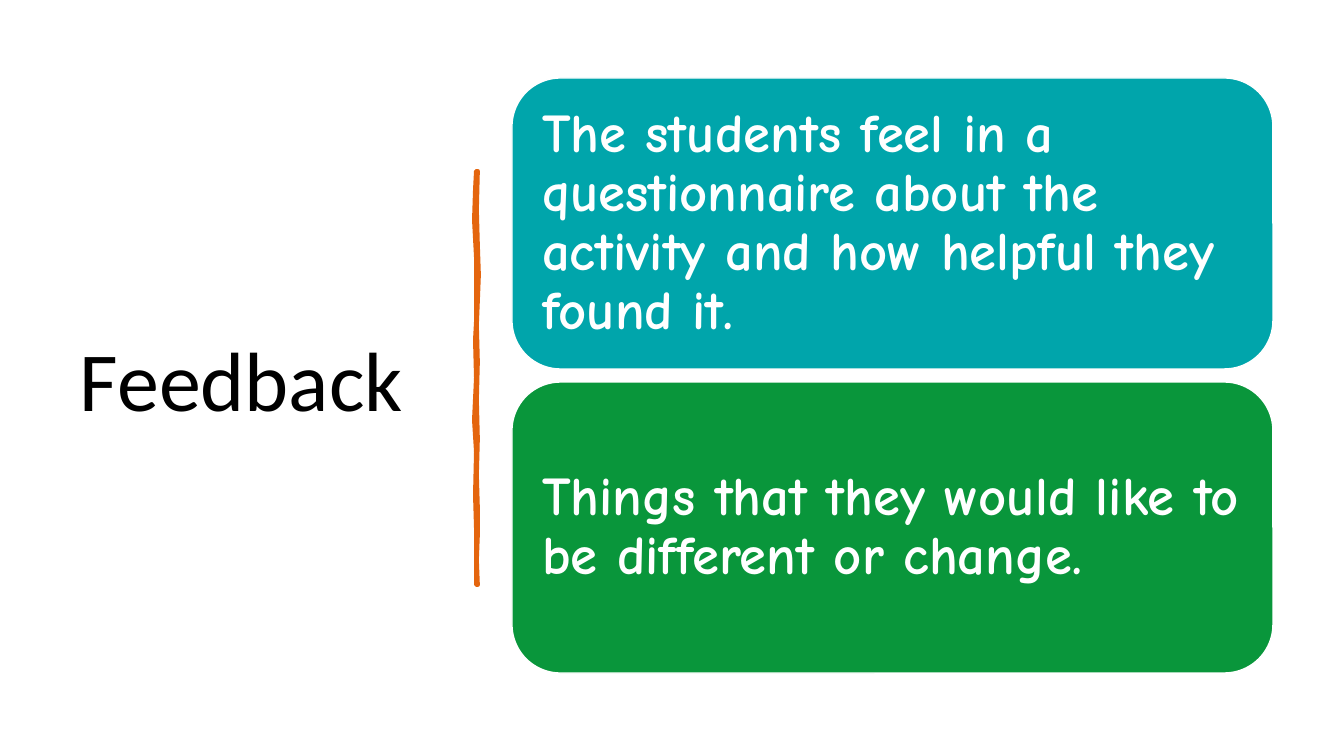
"""Build the Feedback slide: a title, a hand-drawn divider and two rounded panels."""
from pptx import Presentation
from pptx import util as u
from pptx.dml.color import RGBColor
from pptx.enum import shapes, text

PX = 914400 / 100.8


def px(length):
    return u.Emu(round(length * PX))


def color(value):
    return RGBColor.from_string(value)


deck = Presentation()
deck.slide_width, deck.slide_height = px(1344), px(756)
slide = deck.slides.add_slide(deck.slide_layouts[6])

backdrop = slide.shapes.add_shape(shapes.MSO_SHAPE.RECTANGLE, 0, 0, px(1344), px(756))
backdrop.shadow.inherit = False
backdrop.fill.solid()
backdrop.fill.fore_color.rgb = color("FFFFFF")
backdrop.line.fill.background()

title = slide.shapes.add_textbox(px(70), px(70), px(377), px(616))
title_frame = title.text_frame
title_frame.word_wrap = True
title_frame.vertical_anchor = text.MSO_ANCHOR.MIDDLE
heading = title_frame.paragraphs[0]
heading.text = "Feedback"
heading.font.name = "Calibri"
heading.font.size = u.Pt(60)
heading.font.color.rgb = color("000000")

right_edge = [(478, 171), (477, 210), (478, 245), (479, 275), (478, 301),
              (477, 325), (478, 362), (477, 400), (478, 439), (477, 475),
              (478, 508), (478, 535), (477, 560), (478, 585)]
left_edge = [(476, 585), (476, 528), (475, 495), (476, 452), (474, 420),
             (476, 378), (475, 340), (476, 322), (476, 290), (476, 257),
             (474, 220), (475, 190)]
outline = slide.shapes.build_freeform(476, 171, scale=PX)
outline.add_line_segments(right_edge + left_edge, close=True)
divider = outline.convert_to_shape()
divider.shadow.inherit = False
divider.fill.solid()
divider.fill.fore_color.rgb = color("E4650E")
divider.line.color.rgb = color("E4650E")
divider.line.width = u.Pt(2.75)

panels = [
    ("The students feel in a questionnaire about the activity and how helpful they found it.", "00A5AB"),
    ("Things that they would like to be different or change.", "09963B"),
]
for row, (wording, fill) in enumerate(panels):
    panel = slide.shapes.add_shape(shapes.MSO_SHAPE.ROUNDED_RECTANGLE,
                                   px(512), px(78 + 304 * row), px(761), px(291))
    panel.shadow.inherit = False
    panel.fill.solid()
    panel.fill.fore_color.rgb = color(fill)
    panel.line.color.rgb = color("FFFFFF")
    panel.line.width = u.Pt(1)
    frame = panel.text_frame
    frame.word_wrap = True
    frame.vertical_anchor = text.MSO_ANCHOR.MIDDLE
    frame.margin_left = frame.margin_right = px(16)
    frame.margin_top = frame.margin_bottom = px(16)
    statement = frame.paragraphs[0]
    statement.text = wording
    statement.alignment = text.PP_ALIGN.LEFT
    statement.line_spacing = 0.9
    statement.font.name = "Comic Neue"
    statement.font.size = u.Pt(39)
    statement.font.bold = True
    statement.font.color.rgb = color("FFFFFF")

deck.save("out.pptx")
